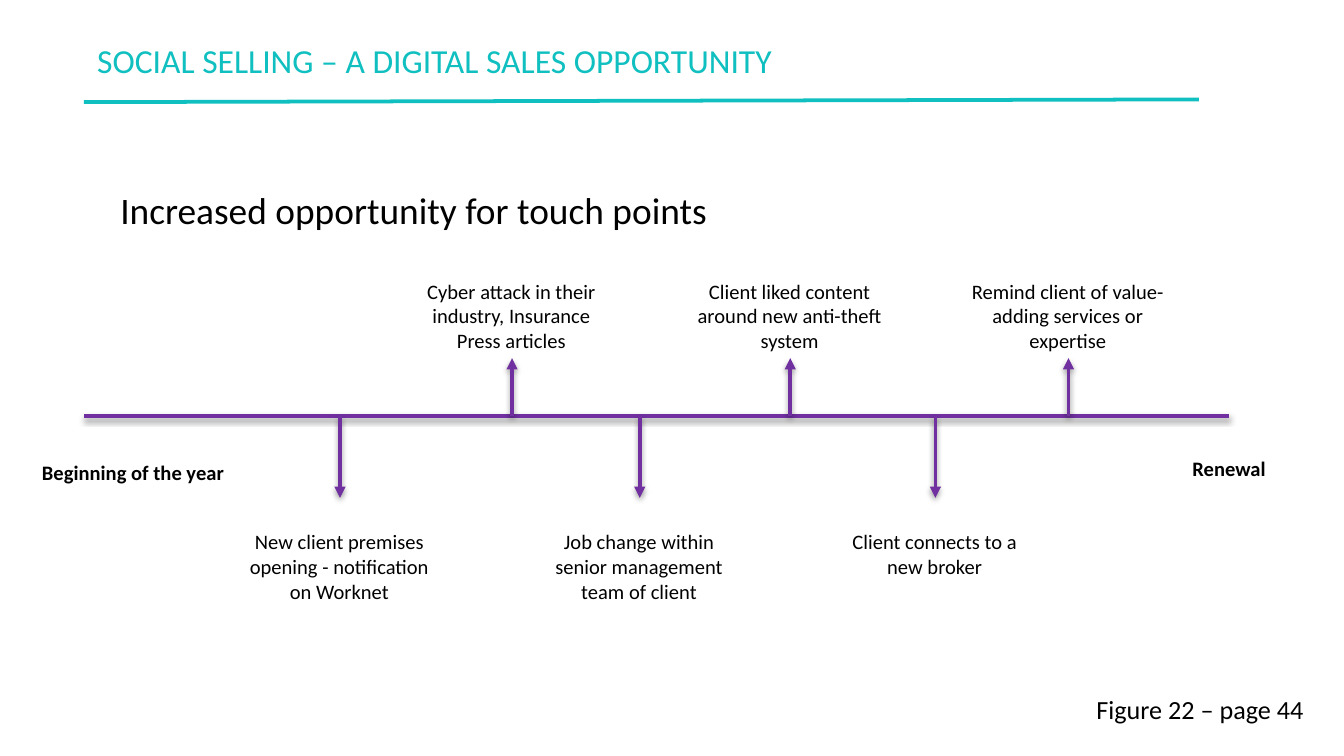
import lxml.etree
import pptx
import pptx.dml.color
import pptx.enum.shapes
import pptx.enum.text
import pptx.oxml.ns
import pptx.util

PX = 4572
COLORS = {"teal": "10BFC0", "purple": "7030A0", "black": "000000"}
LABEL_WIDTH = 342
LABEL_REACH = 172
AXIS_DROP = 214
TOUCH_POINTS = [
    (381, "down", 132, "New client premises opening - notification on Worknet"),
    (637, "up", 132, "Cyber attack in their industry, Insurance Press articles"),
    (827, "down", 132, "Job change within senior management team of client"),
    (1051, "up", 132, "Client liked content around new anti-theft system"),
    (1267, "down", 94, "Client connects to a new broker"),
    (1465, "up", 132, "Remind client of value-adding services or expertise"),
]
YEAR_ENDS = [(74, 269, "Beginning of the year"), (1705, 264, "Renewal")]
DIRECTIONS = {"up": (128, 0), "down": (336, 373)}


def color(name):
    return pptx.dml.color.RGBColor.from_string(COLORS[name])


def add_text(page, box, text, size, tint="black", bold=False, centred=False, wrap=True):
    shape = page.shapes.add_textbox(*[length * PX for length in box])
    frame = shape.text_frame
    frame.word_wrap = wrap
    frame.auto_size = pptx.enum.text.MSO_AUTO_SIZE.SHAPE_TO_FIT_TEXT
    para = frame.paragraphs[0]
    para.text = text
    if centred:
        para.alignment = pptx.enum.text.PP_ALIGN.CENTER
    para.font.name = "Calibri"
    para.font.size = pptx.util.Pt(size)
    para.font.bold = bold
    para.font.color.rgb = color(tint)


def add_line(page, start, end, tint, shadow=False, arrow=False):
    ends = [length * PX for length in (*start, *end)]
    line = page.shapes.add_connector(pptx.enum.shapes.MSO_CONNECTOR.STRAIGHT, *ends)
    line.line.color.rgb = color(tint)
    line.line.width = pptx.util.Pt(2)
    qn = pptx.oxml.ns.qn
    properties = line._element.spPr
    if arrow:
        lxml.etree.SubElement(properties.find(qn("a:ln")), qn("a:tailEnd"), type="triangle")
    effects = lxml.etree.SubElement(properties, qn("a:effectLst"))
    if shadow:
        outer = lxml.etree.SubElement(
            effects, qn("a:outerShdw"), blurRad="40000", dist="20000",
            dir="5400000", rotWithShape="0")
        shade = lxml.etree.SubElement(outer, qn("a:srgbClr"), val=COLORS["black"])
        lxml.etree.SubElement(shade, qn("a:alpha"), val="38000")


def add_header(page, box):
    left, top, width, height = box
    add_line(page, (left, top + height), (left + width, top + height - 4), "teal")
    add_text(page, (left, top, 1054, 80), "SOCIAL SELLING – A DIGITAL SALES OPPORTUNITY",
             18, "teal", wrap=False)


def add_label(page, centre, top, height, text, bold=False):
    box = (centre - LABEL_REACH, top, LABEL_WIDTH, height)
    add_text(page, box, text, 11, bold=bold, centred=True)


def add_timeline(page, box):
    left, top, width, height = box
    axis = top + AXIS_DROP
    add_line(page, (left, axis), (left + width, axis), "purple", shadow=True)
    for offset, drop, text in YEAR_ENDS:
        add_label(page, left + offset, top + drop, 58, text, bold=True)
    for offset, direction, label_height, text in TOUCH_POINTS:
        centre = left + offset
        tip, label_drop = DIRECTIONS[direction]
        add_line(page, (centre, axis), (centre, top + tip), "purple", shadow=True, arrow=True)
        add_label(page, centre, top + label_drop, label_height, text)


def main():
    deck = pptx.Presentation()
    deck.slide_width = 2000 * PX
    deck.slide_height = 1125 * PX
    page = deck.slides.add_slide(deck.slide_layouts[6])
    add_header(page, (125, 49, 1659, 103))
    add_text(page, (102, 268, 1028, 88), "Increased opportunity for touch points", 20, centred=True)
    add_timeline(page, (125, 405, 1704, 505))
    add_text(page, (1612, 1022, 354, 68), "Figure 22 – page 44", 14)
    deck.save("out.pptx")


if __name__ == "__main__":
    main()
